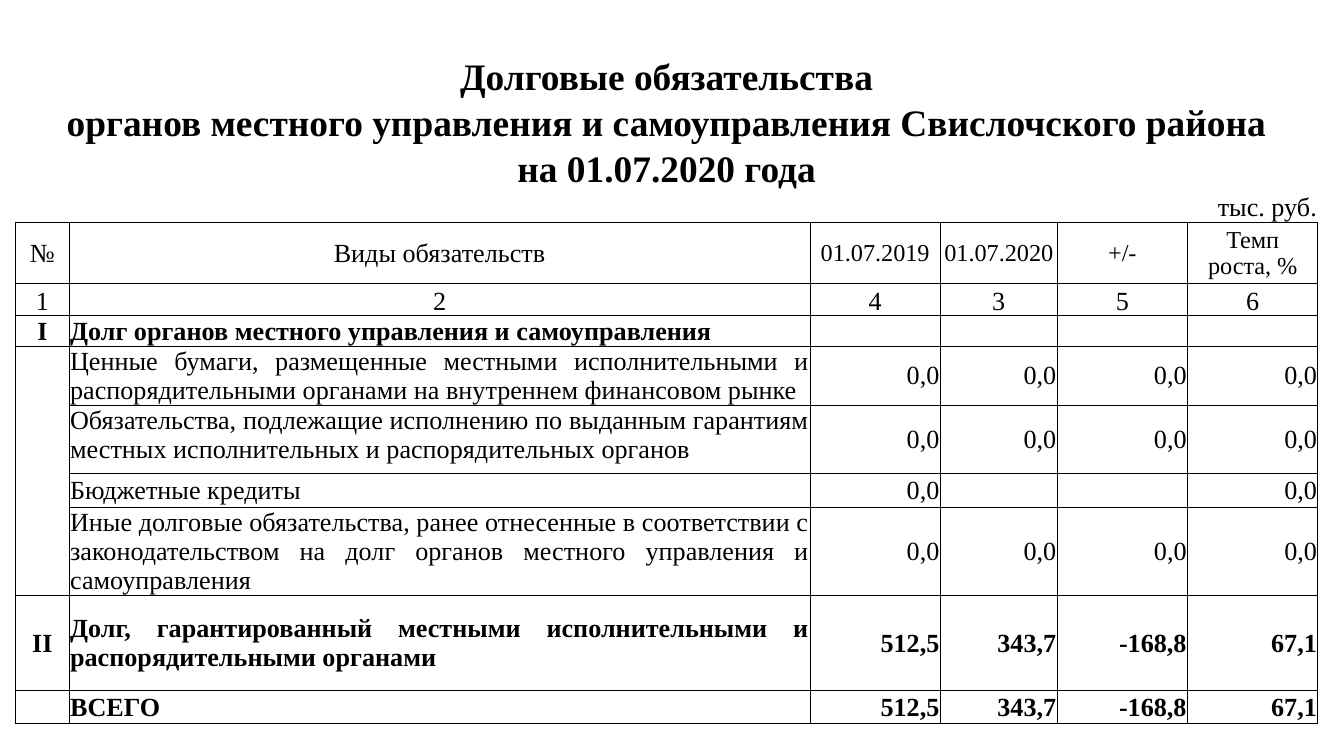
from lxml import etree
from pptx import Presentation
from pptx.dml.color import RGBColor
from pptx.enum.text import MSO_ANCHOR as Anchor, PP_ALIGN as Align
from pptx.oxml.ns import qn
from pptx.util import Inches, Pt

BLACK, WHITE = "000000", "FFFFFF"


def rgb(hex_color):
    return RGBColor.from_string(hex_color)


class DebtSlide:
    """Holds the style and the slide; lengths are percents of the slide size."""

    font_name = "Times New Roman"
    body_size = 14
    line_width = 0.5

    def __init__(self, deck):
        self.width, self.height = deck.slide_width, deck.slide_height
        self.slide = deck.slides.add_slide(deck.slide_layouts[6])

    def across(self, percent):
        return int(self.width * percent / 100)

    def down(self, percent):
        return int(self.height * percent / 100)

    def table(self, left, top, columns, rows):
        grid = self.slide.shapes.add_table(
            len(rows), len(columns), self.across(left), self.down(top),
            self.across(sum(columns)), self.down(sum(rows))).table
        grid.first_row = grid.horz_banding = False
        for column, share in zip(grid.columns, columns):
            column.width = self.across(share)
        for row, share in zip(grid.rows, rows):
            row.height = self.down(share)
        return grid

    def cell(self, cell, text="", align=Align.CENTER, anchor=Anchor.MIDDLE,
             size=body_size, bold=False, fill=None, sides="LRTB"):
        cell.margin_left = cell.margin_right = cell.margin_top = Pt(0.5)
        cell.margin_bottom = 0
        cell.vertical_anchor = anchor
        if fill:
            cell.fill.solid()
            cell.fill.fore_color.rgb = rgb(fill)
        else:
            cell.fill.background()
        self.borders(cell, sides)
        cell.text = text
        for paragraph in cell.text_frame.paragraphs:
            paragraph.alignment = align
            font = paragraph.font
            font.name, font.size, font.bold = self.font_name, Pt(size), bold
            font.color.rgb = rgb(BLACK)
            if not text:
                # The end mark sets the line height of an empty cell.
                etree.SubElement(paragraph._p, qn("a:endParaRPr"), sz=str(size * 100))

    def borders(self, cell, sides):
        """Draw the listed sides and switch the others off."""
        properties = cell._tc.get_or_add_tcPr()
        for position, side in enumerate("LRTB"):
            line = etree.Element(qn(f"a:ln{side}"), w=str(Pt(self.line_width)))
            if side in sides:
                paint = etree.SubElement(line, qn("a:solidFill"))
                etree.SubElement(paint, qn("a:srgbClr"), val=BLACK)
            else:
                etree.SubElement(line, qn("a:noFill"))
            properties.insert(position, line)

    def heading(self, grid, row, text, sides="", **style):
        grid.cell(row, 0).merge(grid.cell(row, len(grid.columns) - 1))
        for column in range(len(grid.columns)):
            self.cell(grid.cell(row, column), text if column == 0 else "",
                      anchor=Anchor.BOTTOM, sides=sides, **style)

    def labels(self, grid, row, texts, sizes, anchor):
        for column, (text, size) in enumerate(zip(texts, sizes)):
            self.cell(grid.cell(row, column), text, size=size, anchor=anchor)

    def debt(self, grid, row, number, name, values, bold=False, sides="LRTB",
             align=Align.JUSTIFY, anchor=Anchor.MIDDLE):
        self.cell(grid.cell(row, 0), number, bold=bold, sides=sides)
        self.cell(grid.cell(row, 1), name, align, anchor, bold=bold)
        for column, value in enumerate(values, 2):
            self.cell(grid.cell(row, column), value, Align.RIGHT, bold=bold, fill=WHITE)


TITLE = ["Долговые обязательства",
         "органов местного управления и самоуправления Свислочского района",
         "на 01.07.2020 года"]
HEADERS = ["№", "Виды обязательств", "01.07.2019", "01.07.2020", "+/-", "Темп\nроста, %"]
ZEROS = ["0,0"] * 4
TOTALS = ["512,5", "343,7", "-168,8", "67,1"]
DEBTS = [
    ("I", "Долг органов местного управления и самоуправления", [""] * 4, {"bold": True}),
    ("", "Ценные бумаги, размещенные местными исполнительными и распорядительными "
     "органами на внутреннем финансовом рынке", ZEROS, {"sides": "LRT"}),
    ("", "Обязательства, подлежащие исполнению по выданным гарантиям местных "
     "исполнительных и распорядительных органов", ZEROS,
     {"sides": "LR", "anchor": Anchor.TOP}),
    ("", "Бюджетные кредиты", ["0,0", "", "", "0,0"], {"sides": "LR"}),
    ("", "Иные долговые обязательства, ранее отнесенные в соответствии с "
     "законодательством на долг органов местного управления и самоуправления",
     ZEROS, {"sides": "LRB"}),
    ("II", "Долг, гарантированный местными исполнительными и распорядительными органами",
     TOTALS, {"bold": True}),
    ("", "ВСЕГО", TOTALS, {"bold": True, "align": Align.LEFT}),
]
COLUMNS = [4, 55.12, 9.7, 8.7, 9.7, 9.7]
ROWS = [6.1] * 3 + [4.2, 8.07, 4.3, 4.03, 7.74, 9.06, 4.5, 11.4, 12.6, 4.4]


def main():
    deck = Presentation()
    deck.slide_width = Inches(10)
    deck.slide_height = deck.slide_width * 9 // 16
    page = DebtSlide(deck)
    grid = page.table(1.15, 6.93, COLUMNS, ROWS)
    for row, line in enumerate(TITLE):
        page.heading(grid, row, line, size=20, bold=True,
                     fill=WHITE if row == 2 else None)
    page.heading(grid, 3, "тыс. руб.", sides="B", align=Align.RIGHT)
    page.labels(grid, 4, HEADERS, [14] * 2 + [13] * 4, Anchor.MIDDLE)
    page.labels(grid, 5, "124356", [14] * 6, Anchor.BOTTOM)
    for row, (number, name, values, style) in enumerate(DEBTS, 6):
        page.debt(grid, row, number, name, values, **style)
    deck.save("out.pptx")


if __name__ == "__main__":
    main()
